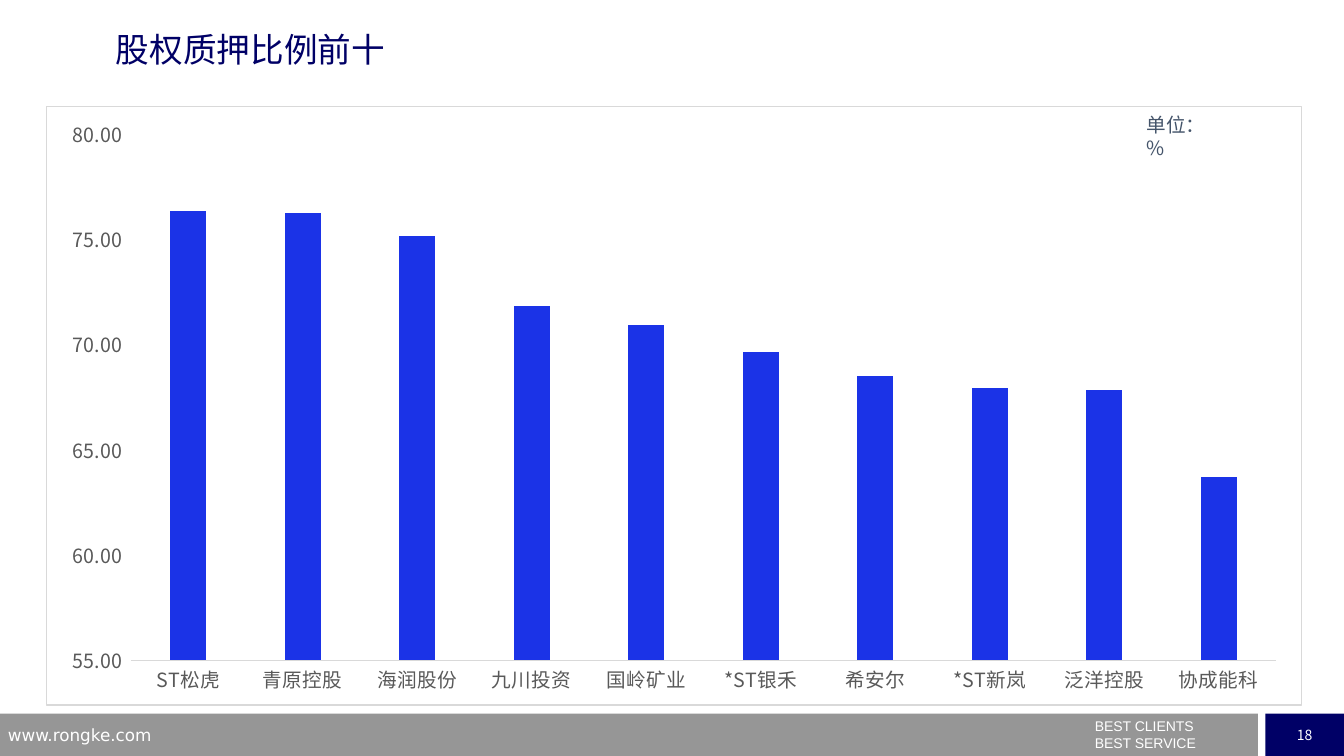
from dataclasses import dataclass

import lxml.etree
import pptx
import pptx.chart.data
import pptx.dml.color
import pptx.enum.chart
import pptx.enum.shapes
import pptx.enum.text
import pptx.oxml
import pptx.oxml.ns
import pptx.util

ALIGN = pptx.enum.text.PP_ALIGN
ANCHOR = pptx.enum.text.MSO_ANCHOR
WIDTH, HEIGHT = pptx.util.Inches(13.33), pptx.util.Inches(7.5)
FOOTER_TOP, FOOTER_HEIGHT = 94.4, 5.6

PLEDGE_RATIOS = {
    "ST松虎": 76.3, "青原控股": 76.2, "海润股份": 75.1, "九川投资": 71.8,
    "国岭矿业": 70.9, "*ST银禾": 69.6, "希安尔": 68.5, "*ST新岚": 67.9,
    "泛洋控股": 67.8, "协成能科": 63.7,
}


@dataclass(frozen=True)
class Theme:
    navy: str = "000066"
    grey: str = "969696"
    white: str = "FFFFFF"
    slate: str = "44546A"
    bar: str = "1B33E7"
    label: str = "595959"
    rule: str = "D9D9D9"
    cjk: str = "Noto Sans CJK SC"
    latin: str = "Arial"
    web: str = "DejaVu Sans"
    title: int = 24
    body: int = 14
    address: int = 12
    small: int = 10


THEME = Theme()


def rgb(color):
    return pptx.dml.color.RGBColor.from_string(color)


def percent_box(left, top, width, height):
    return (int(WIDTH * left / 100), int(HEIGHT * top / 100),
            int(WIDTH * width / 100), int(HEIGHT * height / 100))


def style_font(font, size, color, name=THEME.cjk):
    font.size = pptx.util.Pt(size)
    font.name = name
    font.bold = False
    font.color.rgb = rgb(color)


def write(sp, text, size, color, name=THEME.cjk, align=ALIGN.LEFT,
          anchor=ANCHOR.TOP, inset=True, wrap=True, spacing=None, before=0):
    tf = sp.text_frame
    tf.auto_size = pptx.enum.text.MSO_AUTO_SIZE.NONE
    tf.word_wrap = wrap
    tf.vertical_anchor = anchor
    if not inset:
        tf.margin_left = tf.margin_right = tf.margin_top = tf.margin_bottom = 0
    for i, line in enumerate(text.split("\n")):
        p = tf.add_paragraph() if i else tf.paragraphs[0]
        p.alignment = align
        if spacing:
            p.line_spacing = spacing
        if i:
            p.space_before = pptx.util.Pt(before)
        r = p.add_run()
        r.text = line
        style_font(r.font, size, color, name)


def add_text(slide, box, text, size, color, **fmt):
    sp = slide.shapes.add_textbox(*percent_box(*box))
    write(sp, text, size, color, **fmt)


def add_block(slide, left, width, color):
    box = percent_box(left, FOOTER_TOP, width, FOOTER_HEIGHT)
    sp = slide.shapes.add_shape(pptx.enum.shapes.MSO_SHAPE.RECTANGLE, *box)
    sp.shadow.inherit = False
    sp.fill.solid()
    sp.fill.fore_color.rgb = rgb(color)
    sp.line.fill.background()
    return sp


def add_footer(slide):
    add_block(slide, 0, 93.6, THEME.grey)
    page = add_block(slide, 94.15, 5.85, THEME.navy)
    write(page, "18", THEME.small, THEME.white, align=ALIGN.CENTER,
          anchor=ANCHOR.MIDDLE, wrap=False)
    add_text(slide, (80.72, 95.2, 19.2, 4.8), "BEST CLIENTS\nBEST SERVICE",
             THEME.small, THEME.white, name=THEME.latin, spacing=0.5, before=6)
    add_text(slide, (-0.15, 95.2, 24, 3.47), "www.rongke.com",
             THEME.address, THEME.white, name=THEME.web)


def add_title(slide, text):
    sp = slide.shapes.title
    sp.left, sp.top, sp.width, sp.height = percent_box(8.63, 3.73, 67.5, 5.6)
    write(sp, text, THEME.title, THEME.navy, anchor=ANCHOR.MIDDLE, inset=False)


def frame_chart(chart):
    ns = pptx.oxml.ns.nsdecls("c", "a")
    border = pptx.oxml.parse_xml(
        f'<c:spPr {ns}><a:noFill/><a:ln w="9525"><a:solidFill>'
        f'<a:srgbClr val="{THEME.rule}"/></a:solidFill></a:ln></c:spPr>')
    chart.element.find(pptx.oxml.ns.qn("c:txPr")).addprevious(border)
    plot_area = chart.element.find(".//" + pptx.oxml.ns.qn("c:plotArea"))
    old = plot_area.find(pptx.oxml.ns.qn("c:layout"))
    if old is not None:
        plot_area.remove(old)
    place = "".join(f'<c:{tag} val="{value}"/>' for tag, value in (
        ("layoutTarget", "inner"), ("xMode", "edge"), ("yMode", "edge"),
        ("x", 0.067), ("y", 0.045), ("w", 0.913), ("h", 0.88)))
    plot_area.insert(0, pptx.oxml.parse_xml(
        f"<c:layout {ns}><c:manualLayout>{place}</c:manualLayout></c:layout>"))


def add_ratio_chart(slide, ratios):
    data = pptx.chart.data.CategoryChartData()
    data.categories = list(ratios)
    data.add_series("Series 1", list(ratios.values()))
    kind = pptx.enum.chart.XL_CHART_TYPE.COLUMN_CLUSTERED
    box = percent_box(3.45, 14, 93.4, 79.33)
    chart = slide.shapes.add_chart(kind, *box, data).chart
    chart.has_title = False
    chart.has_legend = False
    style_font(chart.font, THEME.small, "000000")
    frame_chart(chart)

    plot = chart.plots[0]
    plot.vary_by_categories = False
    plot.gap_width, plot.overlap = 219, -27
    fill = plot.series[0].format.fill
    fill.solid()
    fill.fore_color.rgb = rgb(THEME.bar)

    for axis in (chart.category_axis, chart.value_axis):
        axis.has_major_gridlines = False
        axis.major_tick_mark = pptx.enum.chart.XL_TICK_MARK.NONE
        axis.minor_tick_mark = pptx.enum.chart.XL_TICK_MARK.NONE
        style_font(axis.tick_labels.font, THEME.body, THEME.label)
    line = chart.category_axis.format.line
    line.color.rgb = rgb(THEME.rule)
    line.width = pptx.util.Pt(0.75)
    values = chart.value_axis
    values.format.line.fill.background()
    values.minimum_scale, values.maximum_scale, values.major_unit = 55, 80, 5
    values.tick_labels.number_format = r"#,##0.00_);[Red]\(#,##0.00\)"
    values.tick_labels.number_format_is_linked = False
    return chart


def match_east_asian(root):
    for latin in list(root.iter(pptx.oxml.ns.qn("a:latin"))):
        ea = lxml.etree.Element(pptx.oxml.ns.qn("a:ea"))
        ea.set("typeface", latin.get("typeface"))
        latin.addnext(ea)


def main():
    prs = pptx.Presentation()
    prs.slide_width, prs.slide_height = WIDTH, HEIGHT
    slide = prs.slides.add_slide(prs.slide_layouts[5])
    add_footer(slide)
    add_title(slide, "股权质押比例前十")
    chart = add_ratio_chart(slide, PLEDGE_RATIOS)
    add_text(slide, (85.3, 14.93, 5.25, 3.2), "单位：%",
             THEME.body, THEME.slate, inset=False)
    match_east_asian(slide.element)
    match_east_asian(chart.element)
    prs.save("out.pptx")


if __name__ == "__main__":
    main()
